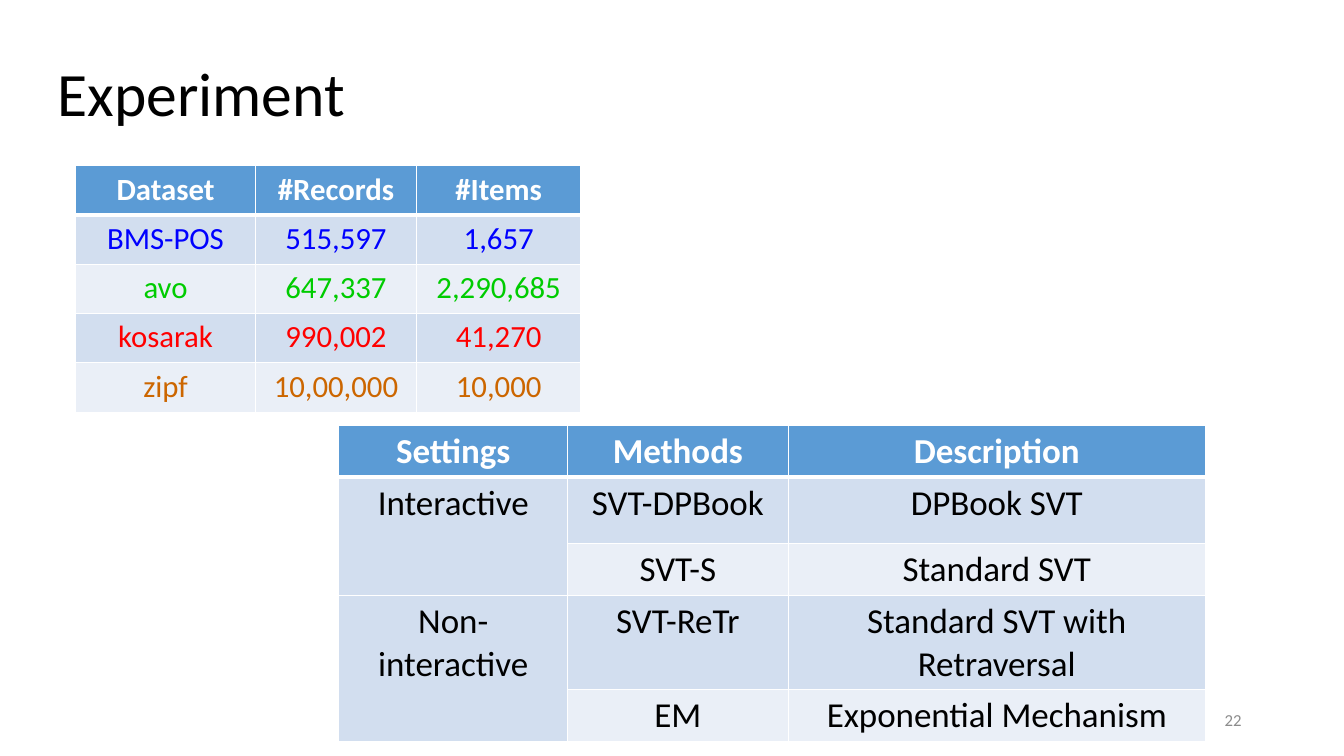
from lxml import etree
from pptx import Presentation
from pptx.dml.color import RGBColor
from pptx.enum.text import MSO_ANCHOR, PP_ALIGN
from pptx.oxml.ns import qn
from pptx.util import Pt

LEFT, CENTER, RIGHT = PP_ALIGN.LEFT, PP_ALIGN.CENTER, PP_ALIGN.RIGHT
MIDDLE = MSO_ANCHOR.MIDDLE

FONT = "Calibri"
BLACK = RGBColor(0x00, 0x00, 0x00)
WHITE = RGBColor(0xFF, 0xFF, 0xFF)
GREY = RGBColor(0x8C, 0x8C, 0x8C)
HEADER_BLUE = RGBColor(0x5B, 0x9B, 0xD5)
DARK_BAND = RGBColor(0xD2, 0xDE, 0xEF)
LIGHT_BAND = RGBColor(0xEA, 0xEF, 0xF7)
BLUE = RGBColor(0x00, 0x00, 0xFF)
GREEN = RGBColor(0x00, 0xCC, 0x00)
RED = RGBColor(0xFF, 0x00, 0x00)
ORANGE = RGBColor(0xCC, 0x66, 0x00)

DATASETS = [
    ("Dataset", "#Records", "#Items"),
    ("BMS-POS", "515,597", "1,657"),
    ("avo", "647,337", "2,290,685"),
    ("kosarak", "990,002", "41,270"),
    ("zipf", "10,00,000", "10,000"),
]
METHODS = [
    ("Settings", "Methods", "Description"),
    ("Interactive", "SVT-DPBook", "DPBook SVT"),
    ("", "SVT-S", "Standard SVT"),
    ("Non-interactive", "SVT-ReTr", "Standard SVT with Retraversal"),
    ("", "EM", "Exponential Mechanism"),
]


def add_run(paragraph, text, size, color, align, bold=False):
    paragraph.alignment = align
    run = paragraph.add_run()
    run.text = text
    run.font.name = FONT
    run.font.size = Pt(size)
    run.font.bold = bold
    run.font.color.rgb = color


def add_label(slide, text, box, size, color, align):
    label = slide.shapes.add_textbox(*map(Pt, box))
    frame = label.text_frame
    frame.word_wrap = True
    frame.vertical_anchor = MIDDLE
    paragraph = frame.paragraphs[0]
    paragraph.line_spacing = 0.9
    add_run(paragraph, text, size, color, align)


def set_borders(cell, top, bottom):
    """Draw white borders; top and bottom are widths in points."""
    properties = cell._tc.get_or_add_tcPr()
    widths = (("a:lnL", 1), ("a:lnR", 1), ("a:lnT", top), ("a:lnB", bottom))
    for position, (tag, width) in enumerate(widths):
        line = etree.Element(qn(tag), w=str(Pt(width)))
        fill = etree.SubElement(line, qn("a:solidFill"))
        etree.SubElement(fill, qn("a:srgbClr"), val=str(WHITE))
        properties.insert(position, line)


def add_banded_table(slide, rows, corner, widths, heights, size, row_colors):
    """Add a table with a header row and alternating bands below it."""
    frame = slide.shapes.add_table(
        len(rows), len(widths), *map(Pt, (*corner, sum(widths), sum(heights))))
    table = frame.table
    for column, width in zip(table.columns, widths):
        column.width = Pt(width)
    for r, (texts, height) in enumerate(zip(rows, heights)):
        table.rows[r].height = Pt(height)
        is_header = r == 0
        band = HEADER_BLUE if is_header else DARK_BAND if r % 2 else LIGHT_BAND
        color = WHITE if is_header else row_colors[r - 1]
        for c, text in enumerate(texts):
            cell = table.cell(r, c)
            cell.fill.solid()
            cell.fill.fore_color.rgb = band
            set_borders(cell, 3 if r == 1 else 1, 3 if is_header else 1)
            if text:
                add_run(cell.text_frame.paragraphs[0], text, size, color,
                        CENTER, is_header)
    return table


def main():
    deck = Presentation()
    deck.slide_width, deck.slide_height = Pt(960), Pt(540)
    slide = deck.slides.add_slide(deck.slide_layouts[6])

    add_label(slide, "Experiment", (34, 16.5, 828, 104.5), 44, BLACK, LEFT)
    add_banded_table(slide, DATASETS, (54, 118.5), (128.5, 115, 117.5),
                     [35.2] * 5, 22, (BLUE, GREEN, RED, ORANGE))
    add_label(slide, "22", (678, 500.5, 216, 29), 12, GREY, RIGHT)
    methods = add_banded_table(slide, METHODS, (242, 303.5), (163.5, 157.5, 298),
                               (34.5, 47.5, 34.5, 42.5, 31.5), 25, [BLACK] * 4)
    for first in (1, 3):
        methods.cell(first, 0).merge(methods.cell(first + 1, 0))

    deck.save("out.pptx")


if __name__ == "__main__":
    main()
